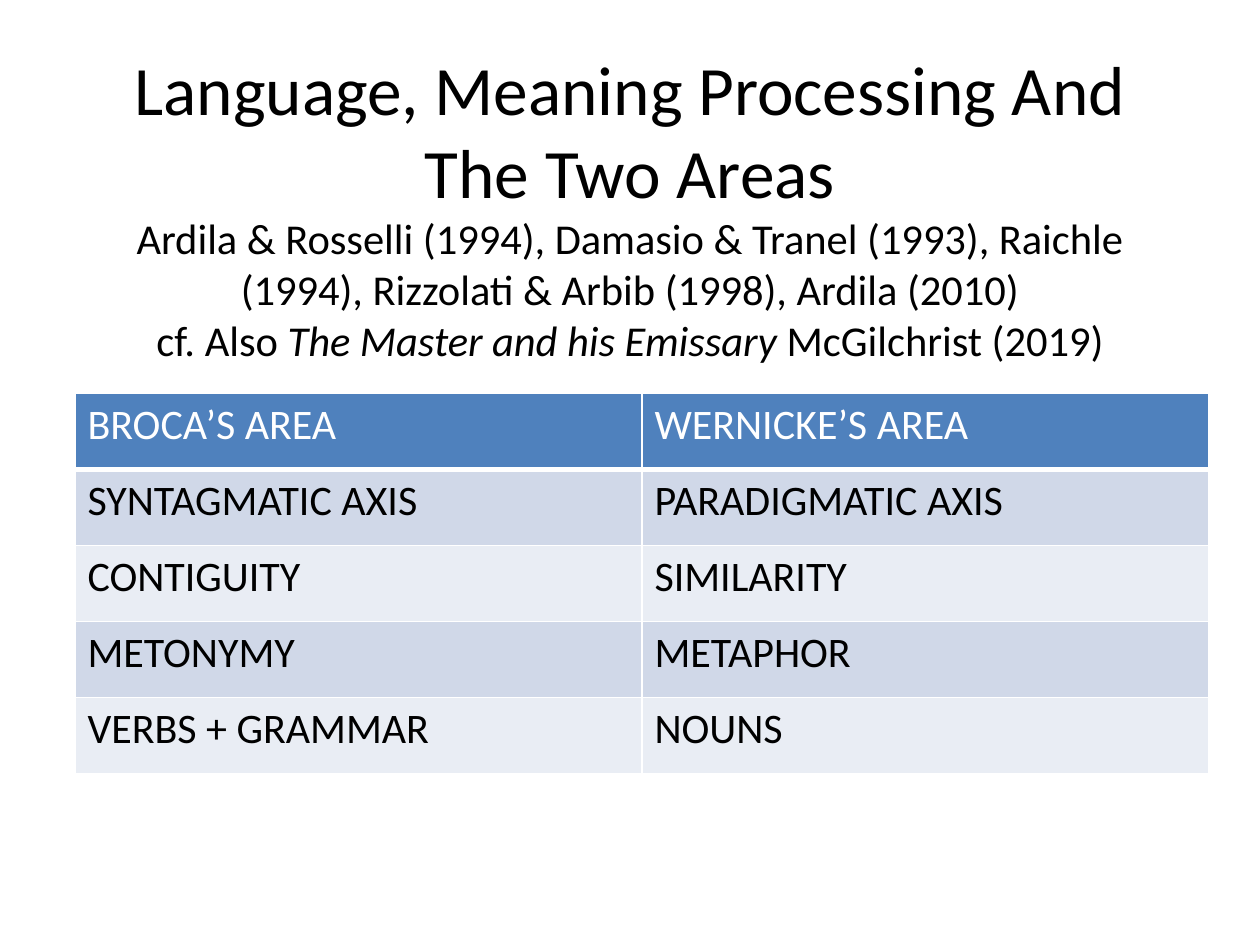
"""Build a slide comparing Broca's and Wernicke's areas in a two-column table."""
from dataclasses import dataclass

import lxml.etree
import pptx
import pptx.dml.color
import pptx.enum.text
import pptx.oxml.ns
import pptx.util

Pt = pptx.util.Pt


@dataclass(frozen=True)
class Theme:
    font: str = "Calibri"
    ink: str = "000000"
    paper: str = "FFFFFF"
    header: str = "4F81BD"
    bands: tuple[str, str] = ("D0D8E8", "E9EDF4")
    title_size: float = 39.6
    citation_size: float = 24.3
    cell_size: float = 24


@dataclass(frozen=True)
class Contrast:
    broca: str
    wernicke: str


THEME = Theme()
CONTRASTS = [
    Contrast("BROCA’S AREA", "WERNICKE’S AREA"),
    Contrast("SYNTAGMATIC AXIS", "PARADIGMATIC AXIS"),
    Contrast("CONTIGUITY", "SIMILARITY"),
    Contrast("METONYMY", "METAPHOR"),
    Contrast("VERBS + GRAMMAR", "NOUNS"),
]


def color(value: str) -> pptx.dml.color.RGBColor:
    return pptx.dml.color.RGBColor.from_string(value)


def add_text(para, text: str, *, size: float, ink: str = THEME.ink,
             italic: bool = False, line_break: bool = False) -> None:
    span = para.add_run()
    span.text = text
    span.font.name = THEME.font
    span.font.size = Pt(size)
    span.font.bold = False
    span.font.italic = italic
    span.font.color.rgb = color(ink)
    if line_break:
        para.add_line_break()


def add_borders(cell, bottom: float) -> None:
    properties = cell._tc.get_or_add_tcPr()
    for side, width in (("L", 1), ("R", 1), ("T", 1), ("B", bottom)):
        line = lxml.etree.SubElement(
            properties, pptx.oxml.ns.qn(f"a:ln{side}"), w=str(Pt(width)))
        fill = lxml.etree.SubElement(line, pptx.oxml.ns.qn("a:solidFill"))
        lxml.etree.SubElement(fill, pptx.oxml.ns.qn("a:srgbClr"), val=THEME.paper)


def add_title(page) -> None:
    box = page.shapes.title
    box.left, box.top, box.width, box.height = Pt(36), Pt(21.6), Pt(648), Pt(191.5)
    frame = box.text_frame
    frame.word_wrap = True
    frame.auto_size = pptx.enum.text.MSO_AUTO_SIZE.NONE
    frame.vertical_anchor = pptx.enum.text.MSO_ANCHOR.MIDDLE
    para = frame.paragraphs[0]
    para.alignment = pptx.enum.text.PP_ALIGN.CENTER
    size = THEME.citation_size
    add_text(para, "Language, Meaning Processing And The Two Areas",
             size=THEME.title_size, line_break=True)
    add_text(para, "Ardila & Rosselli (1994), Damasio & Tranel (1993), Raichle (1994), "
             "Rizzolati & Arbib (1998), Ardila (2010)", size=size, line_break=True)
    add_text(para, "cf. Also ", size=size)
    add_text(para, "The Master and his Emissary ", size=size, italic=True)
    add_text(para, "McGilchrist (2019)", size=size)


def add_contrasts(page, contrasts: list[Contrast]) -> None:
    row_height = 43.45
    table = page.shapes.add_table(
        len(contrasts), 2, Pt(42.8), Pt(224.9), Pt(648),
        Pt(row_height * len(contrasts))).table
    for index, contrast in enumerate(contrasts):
        table.rows[index].height = Pt(row_height)
        is_header = index == 0
        fill = THEME.header if is_header else THEME.bands[(index - 1) % 2]
        for column, text in enumerate((contrast.broca, contrast.wernicke)):
            cell = table.cell(index, column)
            add_borders(cell, bottom=3 if is_header else 1)
            cell.fill.solid()
            cell.fill.fore_color.rgb = color(fill)
            add_text(cell.text_frame.paragraphs[0], text, size=THEME.cell_size,
                     ink=THEME.paper if is_header else THEME.ink)


def main() -> None:
    deck = pptx.Presentation()
    deck.slide_width, deck.slide_height = Pt(720), Pt(540)
    page = deck.slides.add_slide(deck.slide_layouts.get_by_name("Title Only"))
    add_title(page)
    add_contrasts(page, CONTRASTS)
    deck.save("out.pptx")


if __name__ == "__main__":
    main()
